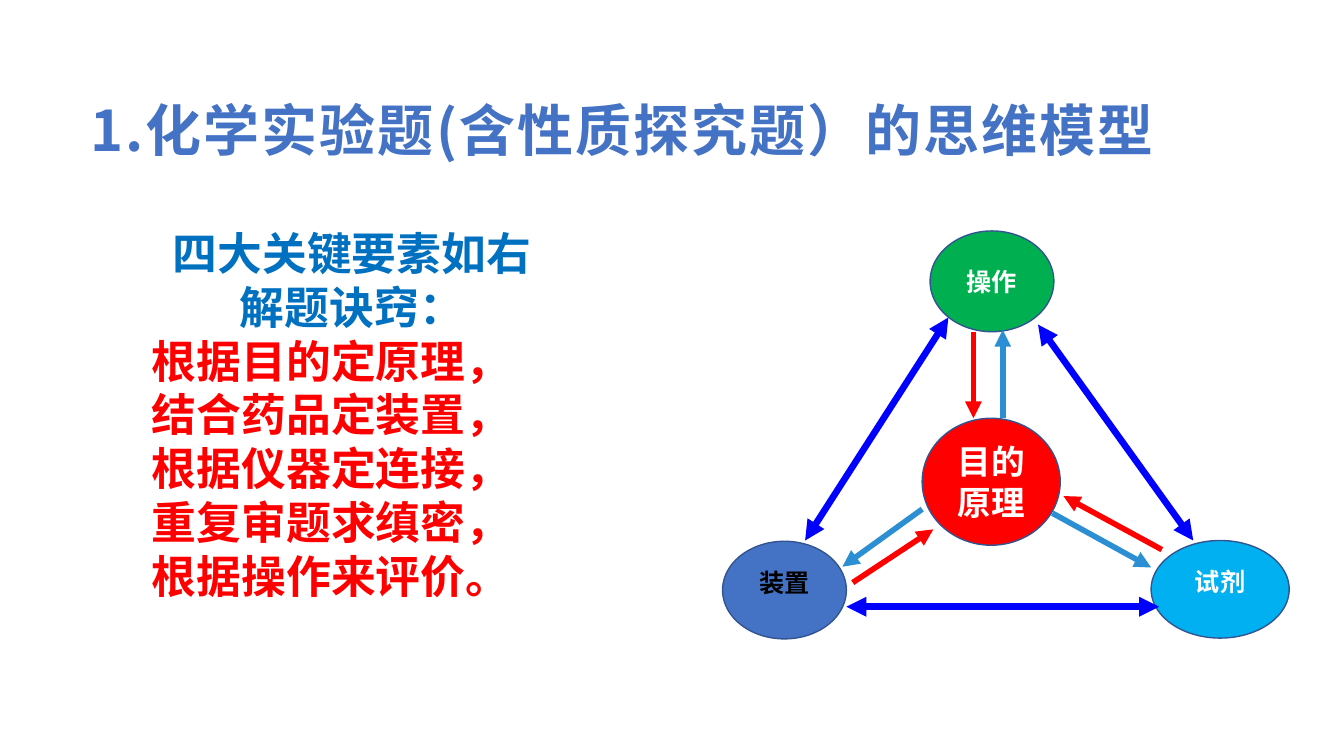
from dataclasses import dataclass

from lxml import etree
from pptx import Presentation
from pptx.dml.color import RGBColor
from pptx.enum.shapes import MSO_CONNECTOR, MSO_SHAPE
from pptx.enum.text import MSO_ANCHOR, PP_ALIGN
from pptx.oxml.ns import qn
from pptx.util import Cm, Pt

OVAL = MSO_SHAPE.OVAL
STRAIGHT = MSO_CONNECTOR.STRAIGHT
TOP, MIDDLE = MSO_ANCHOR.TOP, MSO_ANCHOR.MIDDLE
LEFT, CENTER = PP_ALIGN.LEFT, PP_ALIGN.CENTER


@dataclass(frozen=True)
class Theme:
    font: str = "Noto Sans CJK SC"
    blue: str = "4472C4"
    heading: str = "0070C0"
    red: str = "FF0000"
    green: str = "00B050"
    sky: str = "00B0F0"
    outline: str = "325491"
    link: str = "0000FF"
    outward: str = "2C8FD3"
    white: str = "FFFFFF"
    black: str = "000000"
    title_size: float = 40
    tips_size: float = 32
    core_size: float = 24
    node_size: float = 18
    title_leading: float = 52
    tips_leading: float = 38.4
    core_leading: float = 29
    node_leading: float = 21.6
    link_width: float = 4.75
    flow_width: float = 4


THEME = Theme()

TITLE = "1.化学实验题(含性质探究题）的思维模型"
HEADINGS = ["四大关键要素如右", "解题诀窍："]
TIPS = ["根据目的定原理，", "结合药品定装置，", "根据仪器定连接，",
        "重复审题求缜密，", "根据操作来评价。"]

# Element: lines, box in the diagram (cm), fill, text colour, size, leading, bottom inset
ELEMENTS = [
    (["目的", "原理"], (5.03, 4.72, 3.48, 3.2), THEME.red, THEME.white,
     THEME.core_size, THEME.core_leading, 0.13),
    (["操作"], (5.23, 0, 3.12, 2.54), THEME.green, THEME.white,
     THEME.node_size, THEME.node_leading, 0.13),
    (["试剂"], (10.8, 7.8, 3.48, 2.46), THEME.sky, THEME.white,
     THEME.node_size, THEME.node_leading, 0.5),
    (["装置"], (0, 7.82, 3.12, 2.46), THEME.blue, THEME.black,
     THEME.node_size, THEME.node_leading, 0.5),
]

# Arrows by kind: colour, width, two-headed, ends in the diagram (cm)
ARROWS = [
    (THEME.link, THEME.link_width, True,
     [(2.08, 7.8, 5.69, 2.18), (7.95, 2.36, 11.86, 7.8), (3.12, 9.47, 11, 9.47)]),
    (THEME.red, THEME.flow_width, False,
     [(6.32, 2.54, 6.32, 4.72), (11.07, 8.03, 8.59, 6.68), (3.28, 8.86, 5.31, 7.52)]),
    (THEME.outward, THEME.flow_width, False,
     [(7.06, 4.72, 7.06, 2.49), (8.31, 7.11, 10.8, 8.48), (5.03, 7.01, 3.02, 8.46)]),
]


def set_all(target, values):
    for attribute, value in values.items():
        setattr(target, attribute, value)


def write_line(paragraph, text, size, color, leading, align=LEFT, spacing=None):
    set_all(paragraph, {"alignment": align, "line_spacing": Pt(leading)})
    run = paragraph.add_run()
    run.text = text
    run.font.color.rgb = RGBColor.from_string(color)
    set_all(run.font, {"size": Pt(size), "bold": True, "name": THEME.font})
    properties = run._r.get_or_add_rPr()
    etree.SubElement(properties, qn("a:ea")).set("typeface", THEME.font)
    if spacing:
        properties.set("spc", str(spacing))


def write_lines(frame, lines):
    """Write one paragraph for each dict of line values."""
    for index, line in enumerate(lines):
        paragraph = frame.add_paragraph() if index else frame.paragraphs[0]
        write_line(paragraph, **line)


def add_title(slide, box):
    frame = slide.shapes.add_textbox(*map(Cm, box)).text_frame
    set_all(frame, {"word_wrap": True, "vertical_anchor": TOP})
    write_lines(frame, [dict(text=TITLE, size=THEME.title_size, color=THEME.blue,
                             leading=THEME.title_leading, spacing=150)])


def add_tips(slide, box):
    frame = slide.shapes.add_textbox(*map(Cm, box)).text_frame
    set_all(frame, {"word_wrap": True, "vertical_anchor": TOP, "margin_top": Cm(0.23)})
    base = dict(size=THEME.tips_size, leading=THEME.tips_leading)
    headings = [dict(base, text=text, color=THEME.heading, align=CENTER)
                for text in HEADINGS]
    tips = [dict(base, text=text, color=THEME.red) for text in TIPS]
    write_lines(frame, headings + tips)


def add_element(slide, origin, element):
    lines, (x, y, width, height), fill, color, size, leading, inset = element
    oval = slide.shapes.add_shape(OVAL, Cm(origin[0] + x), Cm(origin[1] + y),
                                  Cm(width), Cm(height))
    oval.shadow.inherit = False
    oval.fill.solid()
    oval.fill.fore_color.rgb = RGBColor.from_string(fill)
    oval.line.color.rgb = RGBColor.from_string(THEME.outline)
    oval.line.width = Pt(1)
    set_all(oval.text_frame, {"word_wrap": True, "vertical_anchor": MIDDLE,
                              "margin_bottom": Cm(inset)})
    write_lines(oval.text_frame, [dict(text=text, size=size, color=color,
                                       leading=leading, align=CENTER) for text in lines])


def add_arrow(slide, origin, ends, color, width, two_headed):
    left, top = origin
    x1, y1, x2, y2 = ends
    arrow = slide.shapes.add_connector(STRAIGHT, Cm(left + x1), Cm(top + y1),
                                       Cm(left + x2), Cm(top + y2))
    arrow.line.color.rgb = RGBColor.from_string(color)
    arrow.line.width = Pt(width)
    outline = arrow.line._get_or_add_ln()
    for end in (["headEnd"] if two_headed else []) + ["tailEnd"]:
        etree.SubElement(outline, qn(f"a:{end}")).set("type", "triangle")
    etree.SubElement(arrow._element.spPr, qn("a:effectLst"))


def add_diagram(slide, origin):
    # Four key elements
    for element in ELEMENTS:
        add_element(slide, origin, element)
    # Links between them
    for color, width, two_headed, routes in ARROWS:
        for ends in routes:
            add_arrow(slide, origin, ends, color, width, two_headed)


def main():
    deck = Presentation()
    set_all(deck, {"slide_width": Cm(33.87), "slide_height": Cm(19.05)})
    slide = deck.slides.add_slide(deck.slide_layouts[6])
    add_diagram(slide, (18.21, 5.82))
    add_tips(slide, (3.58, 5.46, 10.59, 9.83))
    add_title(slide, (2.03, 2.13, 29.82, 2.01))
    deck.save("out.pptx")


if __name__ == "__main__":
    main()
